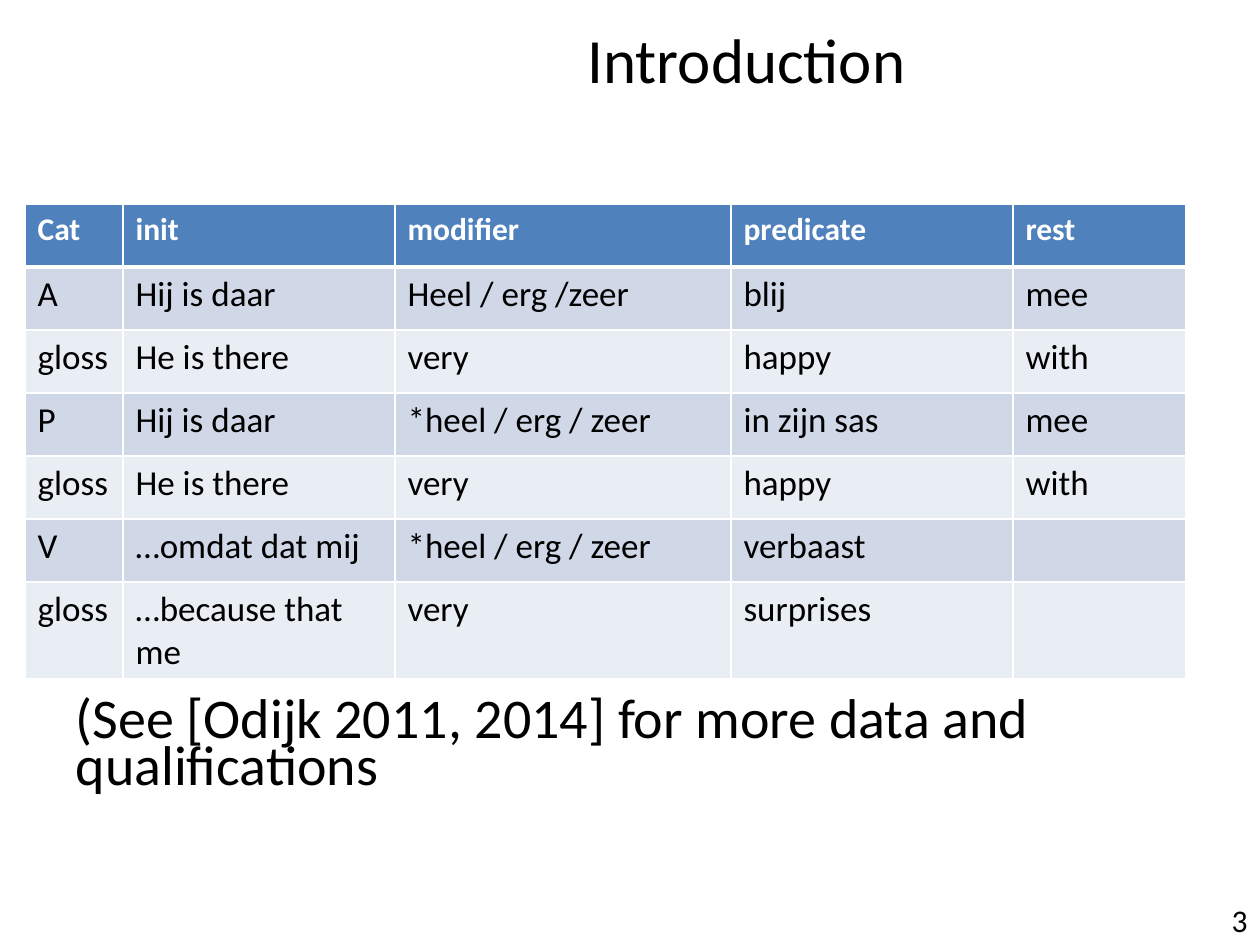
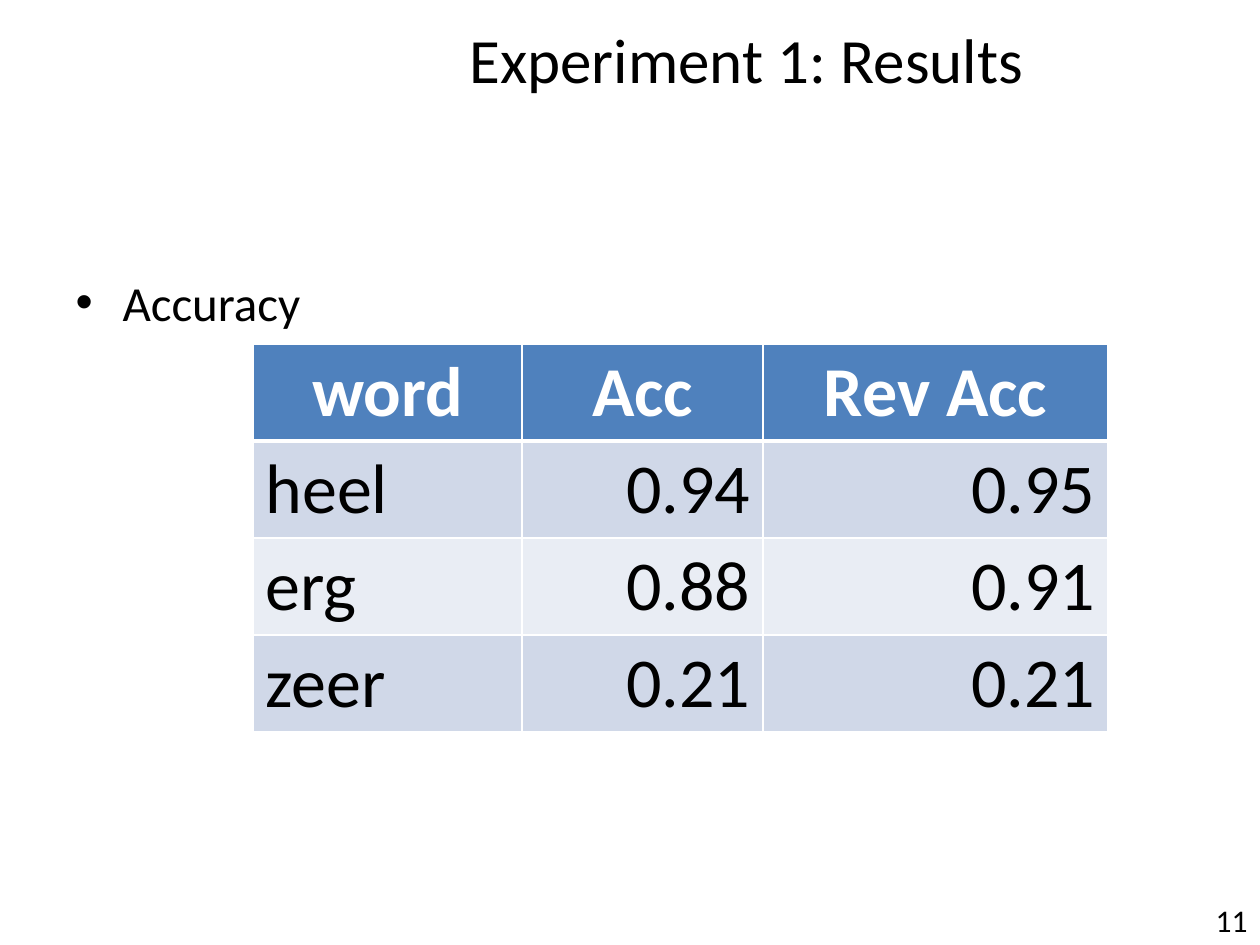
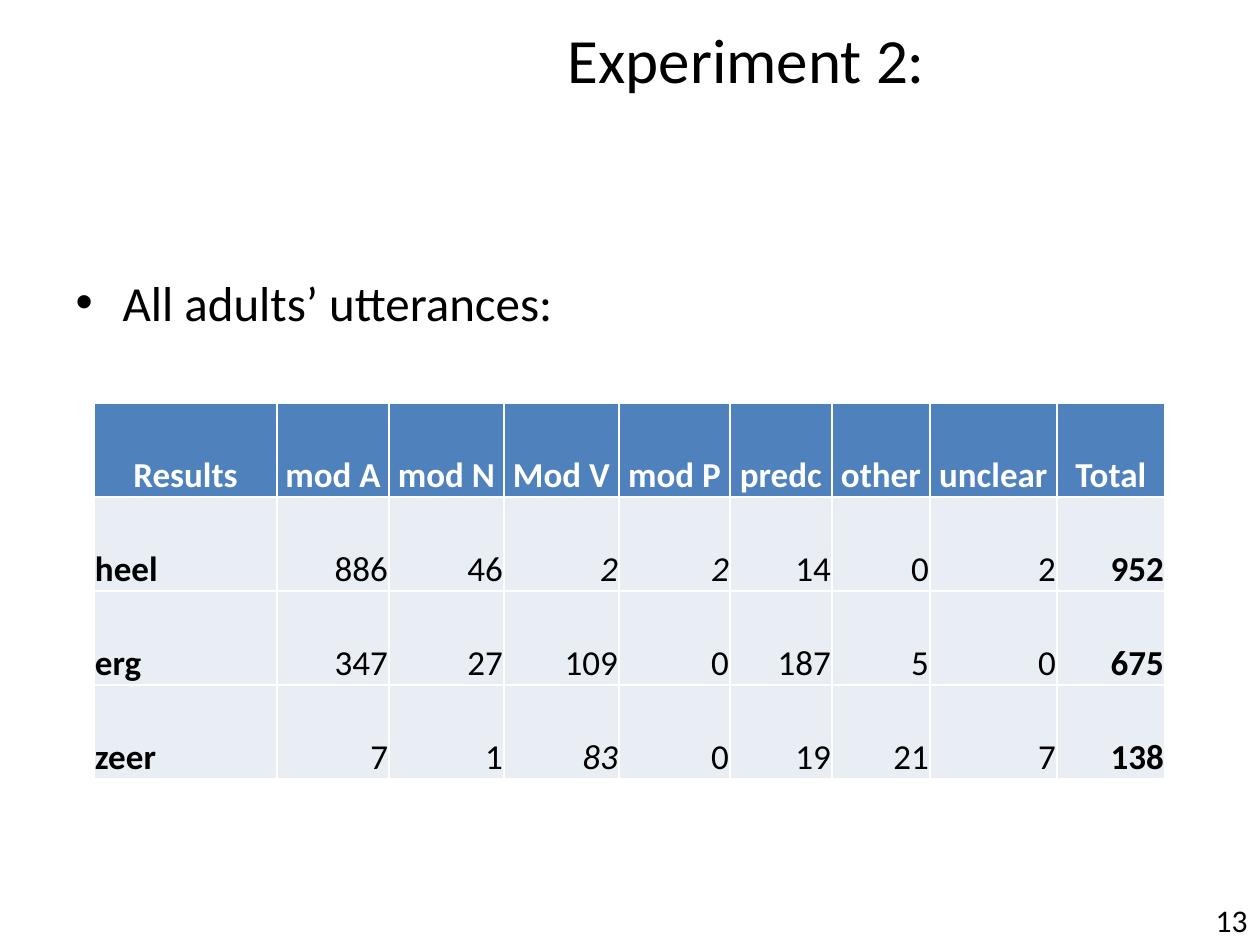
from lxml import etree
from pptx import Presentation
from pptx.dml.color import RGBColor
from pptx.enum.text import MSO_ANCHOR, MSO_AUTO_SIZE, PP_ALIGN
from pptx.oxml.ns import qn
from pptx.util import Emu, Pt

ALIGN = {"l": PP_ALIGN.LEFT, "c": PP_ALIGN.CENTER, "r": PP_ALIGN.RIGHT}
TOP, BOTTOM, MIDDLE = MSO_ANCHOR.TOP, MSO_ANCHOR.BOTTOM, MSO_ANCHOR.MIDDLE
NO_AUTOFIT = MSO_AUTO_SIZE.NONE
TITLE_AND_CONTENT = 1
FONT = "Calibri"
COLORS = {
    "text": "000000",
    "white": "FFFFFF",
    "header": "4F81BD",
    "band": "D0D8E8",
    "light": "E9EDF4",
}


def px(n):
    """Convert pixels (126 to the inch) to EMU."""
    return Emu(round(n * 914400 / 126))


def rgb(name):
    return RGBColor.from_string(COLORS[name])


class Deck:
    def __init__(self):
        self.prs = Presentation()
        self.prs.slide_width, self.prs.slide_height = px(1260), px(945)
        self.s = None

    def place(self, sp, left, top, width, height):
        sp.left, sp.top = px(left), px(top)
        sp.width, sp.height = px(width), px(height)

    def run(self, p, text, size, color="text", bold=False, italic=False):
        r = p.add_run()
        r.text = text
        f = r.font
        f.name, f.size, f.bold, f.italic = FONT, Pt(size), bold, italic
        f.color.rgb = rgb(color)

    def slide(self, title, number):
        """Start a slide with its title and page number."""
        layout = self.prs.slide_layouts[TITLE_AND_CONTENT]
        self.s = self.prs.slides.add_slide(layout)
        sp = self.s.shapes.title
        self.place(sp, 233, 0, 1027, 116)
        tf = sp.text_frame
        tf.auto_size, tf.vertical_anchor = NO_AUTOFIT, MIDDLE
        tf.paragraphs[0].alignment = ALIGN["c"]
        self.run(tf.paragraphs[0], title, 36)

        box = self.s.shapes.add_textbox(px(1126), px(895), px(134), px(50))
        box.text_frame.word_wrap = True
        p = box.text_frame.paragraphs[0]
        p.alignment = ALIGN["r"]
        self.run(p, str(number), 18)

    def body(self, text, size, bullet=True, inset_top=10, spacing=1.0):
        sp = self.s.placeholders[1]
        self.place(sp, 63, 262, 1134, 582)
        tf = sp.text_frame
        tf.auto_size, tf.vertical_anchor = NO_AUTOFIT, TOP
        tf.margin_top = px(inset_top)
        p = tf.paragraphs[0]
        p.level = 1 if bullet else 0
        p.line_spacing, p.space_before = spacing, Pt(0)
        indent = px(47) if bullet else 0
        pPr = p._p.get_or_add_pPr()
        pPr.set("marL", str(indent))
        pPr.set("indent", str(-indent))
        if bullet:
            etree.SubElement(pPr, qn("a:buFont")).set("typeface", "Arial")
            etree.SubElement(pPr, qn("a:buChar")).set("char", "•")
        else:
            etree.SubElement(pPr, qn("a:buNone"))
        self.run(p, text, size)

    def border(self, cell, side, width):
        ln = etree.SubElement(cell._tc.get_or_add_tcPr(), qn("a:ln" + side))
        ln.set("w", str(Pt(width)))
        fill = etree.SubElement(ln, qn("a:solidFill"))
        etree.SubElement(fill, qn("a:srgbClr")).set("val", COLORS["white"])

    def table(self, left, top, cols, row_height, rows, size, aligns,
              header_size=None, header_align="c", bands=("band", "light"),
              rule=3, tight=False, bold_cols=(), italic_cells=()):
        frame = self.s.shapes.add_table(
            len(rows), len(cols), px(left), px(top),
            px(sum(cols)), px(row_height * len(rows)))
        tbl = frame.table
        for column, width in zip(tbl.columns, cols):
            column.width = px(width)
        for i, row in enumerate(rows):
            head = i == 0
            for j, text in enumerate(row):
                cell = tbl.cell(i, j)
                # Borders go before the fill in the cell properties
                self.border(cell, "L", 1)
                self.border(cell, "R", 1)
                self.border(cell, "T", rule if i == 1 else 1)
                self.border(cell, "B", rule if head else 1)
                cell.fill.solid()
                cell.fill.fore_color.rgb = rgb(
                    "header" if head else bands[(i - 1) % len(bands)])
                if tight:
                    cell.margin_left = cell.margin_right = px(1)
                    cell.margin_top, cell.margin_bottom = px(1), 0
                    cell.vertical_anchor = BOTTOM
                if not text:
                    continue
                p = cell.text_frame.paragraphs[0]
                p.alignment = ALIGN[header_align if head else aligns[j]]
                self.run(p, text, header_size or size if head else size,
                         "white" if head else "text",
                         bold=head or j in bold_cols,
                         italic=(i, j) in italic_cells)


def main():
    deck = Deck()

    # Introduction: example sentences with glosses
    deck.slide("Introduction", 3)
    deck.body("(See [Odijk 2011, 2014] for more data and qualifications", 32,
              bullet=False, inset_top=439, spacing=0.7)
    examples = [
        ["Cat", "init", "modifier", "predicate", "rest"],
        ["A", "Hij is daar", "Heel / erg /zeer", "blij", "mee"],
        ["gloss", "He is there", "very", "happy", "with"],
        ["P", "Hij is daar", "*heel / erg / zeer", "in zijn sas", "mee"],
        ["gloss", "He is there", "very", "happy", "with"],
        ["V", "…omdat dat mij", "*heel / erg / zeer", "verbaast", ""],
        ["gloss", "…because that me", "very", "surprises", ""],
    ]
    deck.table(25, 204, [98, 272, 336, 282, 173], 63, examples, 20, "lllll",
               header_size=18, header_align="l")

    # Experiment 1: accuracy per word
    deck.slide("Experiment 1: Results", 11)
    deck.body("Accuracy", 28)
    accuracy = [
        ["word", "Acc", "Rev Acc"],
        ["heel", "0.94", "0.95"],
        ["erg", "0.88", "0.91"],
        ["zeer", "0.21", "0.21"],
    ]
    deck.table(253, 344, [269, 241, 345], 97, accuracy, 40, "lrr")

    # Experiment 2: counts per modified category
    deck.slide("Experiment 2:", 13)
    deck.body("All adults’ utterances:", 28)
    counts = [
        ["Results", "mod A", "mod N", "Mod V", "mod P", "predc", "other",
         "unclear", "Total"],
        ["heel", "886", "46", "2", "2", "14", "0", "2", "952"],
        ["erg", "347", "27", "109", "0", "187", "5", "0", "675"],
        ["zeer", "7", "1", "83", "0", "19", "21", "7", "138"],
    ]
    deck.table(94, 403, [183, 112, 115, 115, 111, 102, 98, 127, 108], 94,
               counts, 20, "lrrrrrrrr", bands=("light",), rule=1, tight=True,
               bold_cols=(0, 8), italic_cells={(1, 3), (1, 4), (3, 3)})

    deck.prs.save("out.pptx")


if __name__ == "__main__":
    main()
